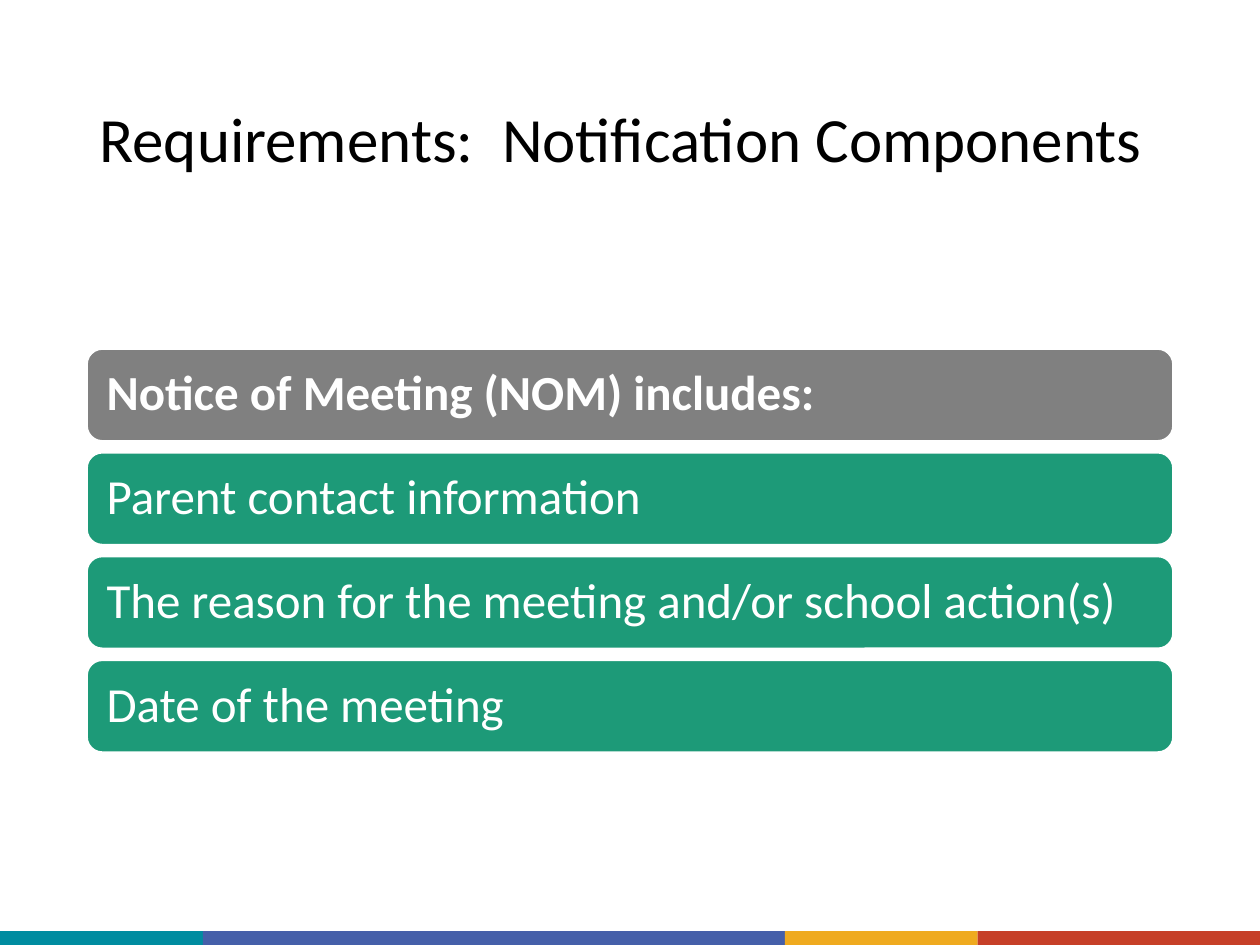
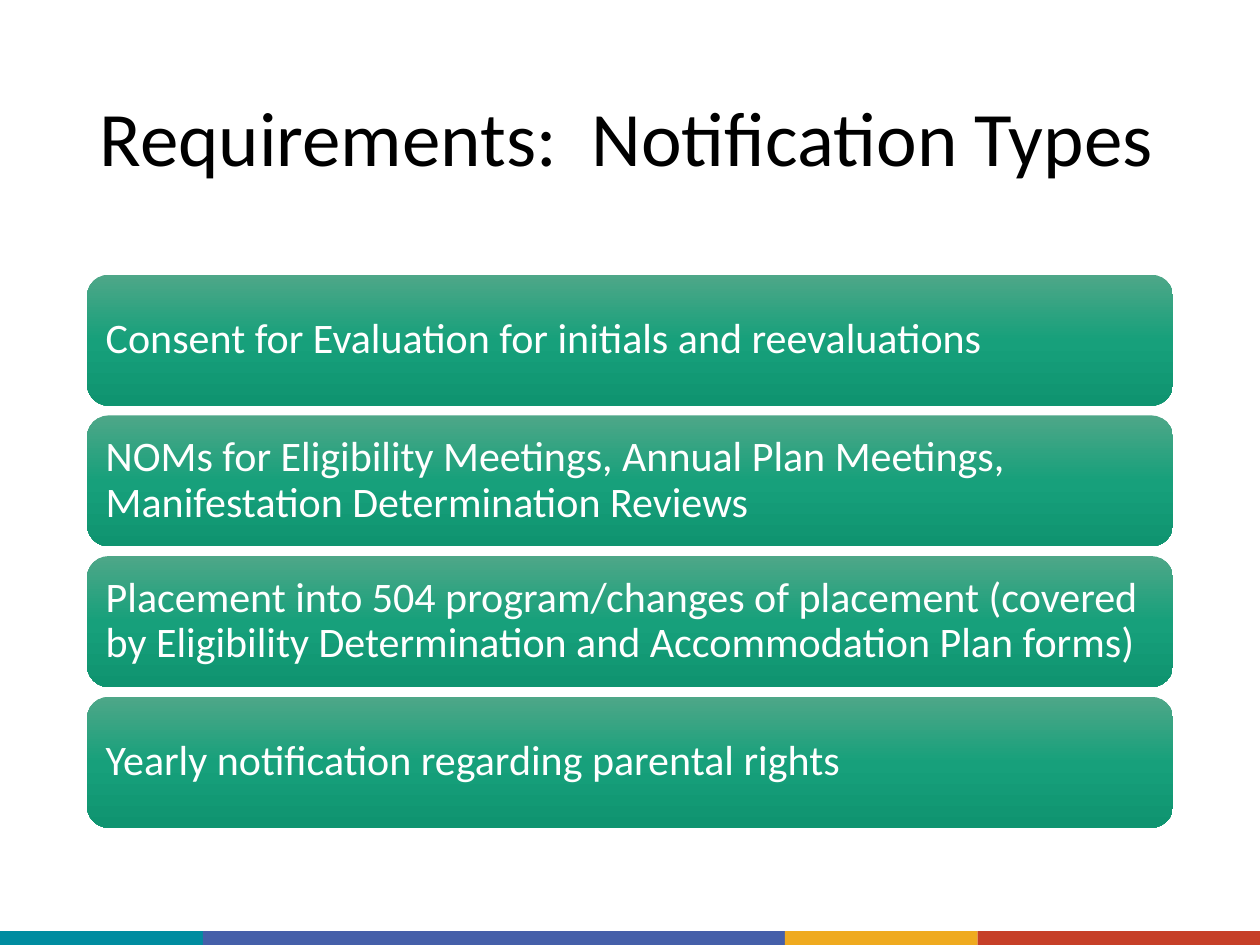
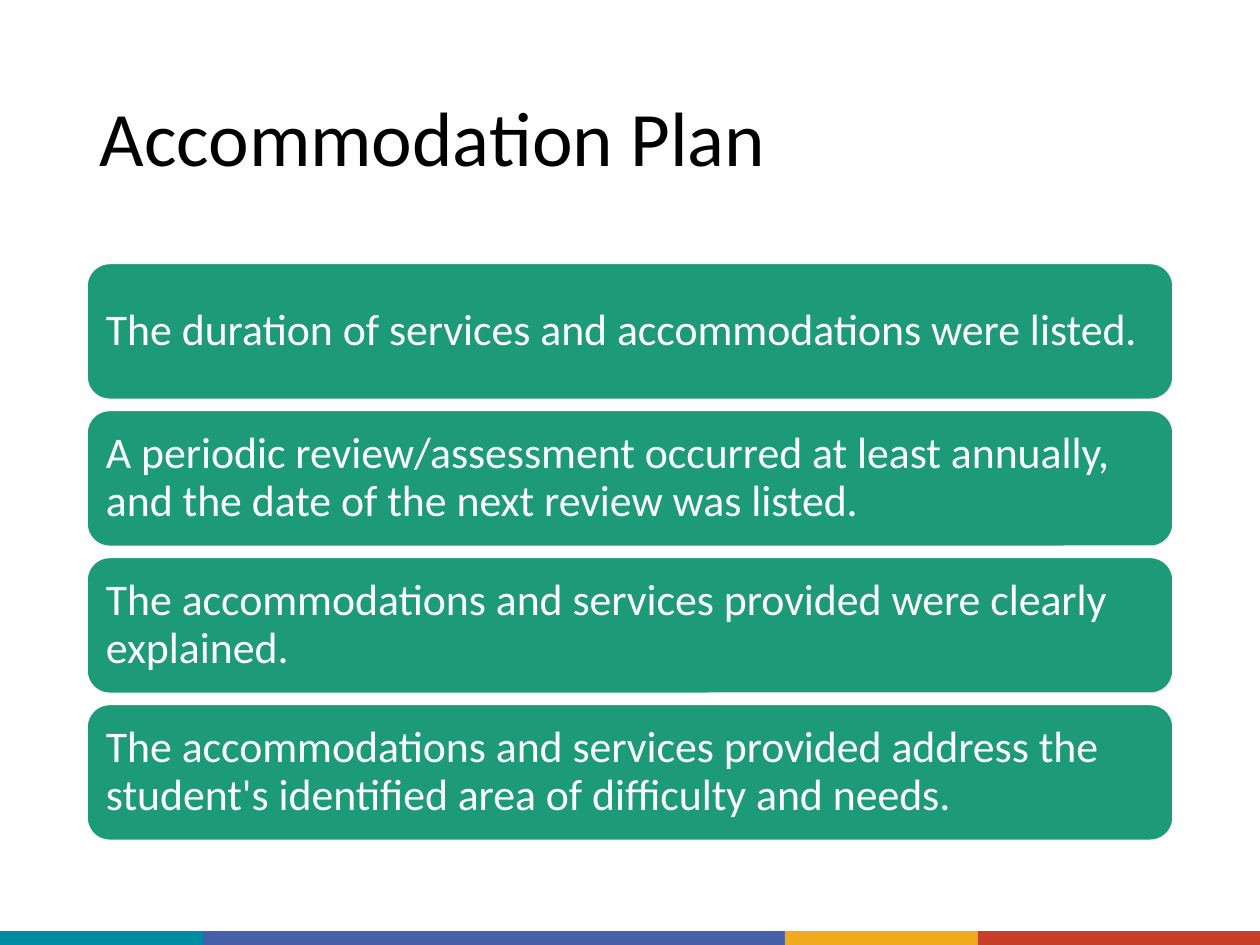
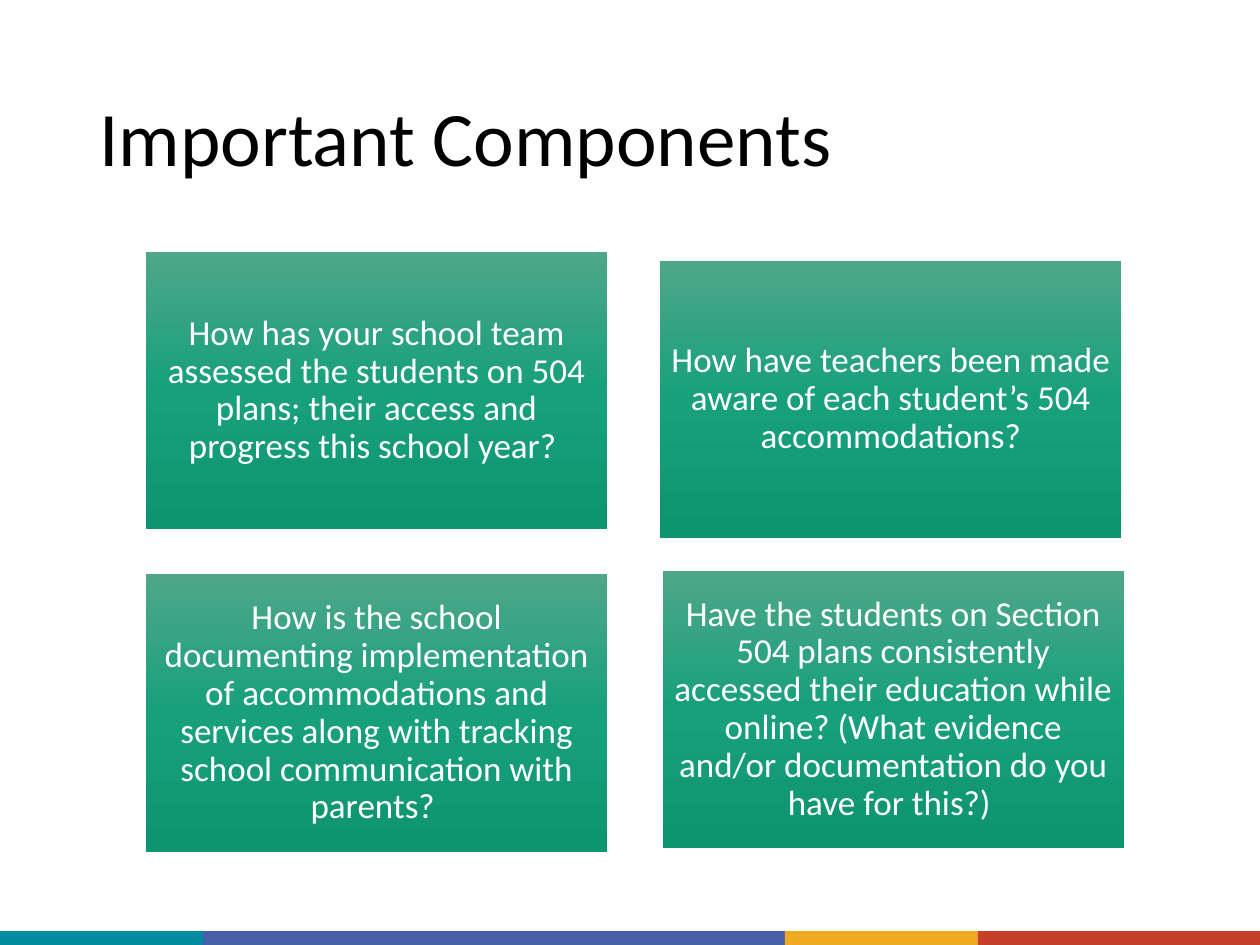
from lxml import etree
from pptx import Presentation
from pptx.dml.color import RGBColor
from pptx.enum.shapes import MSO_SHAPE
from pptx.enum.text import MSO_ANCHOR, MSO_AUTO_SIZE, PP_ALIGN
from pptx.oxml.ns import qn
from pptx.util import Inches, Pt

RECT, ROUND = MSO_SHAPE.RECTANGLE, MSO_SHAPE.ROUNDED_RECTANGLE
LEFT, CENTER = PP_ALIGN.LEFT, PP_ALIGN.CENTER
MIDDLE, NO_FIT = MSO_ANCHOR.MIDDLE, MSO_AUTO_SIZE.NONE

FONT = "Calibri"
COLORS = {
    "black": "000000", "white": "FFFFFF", "gray": "808080", "green": "1D9A78",
    "light": "4EA788", "mid": "17A07B", "dark": "0F9470",
    "teal": "008CA0", "blue": "455FA9", "gold": "EFAA1F", "red": "C63F28",
}
SHADE = [(0, "light"), (50, "mid"), (100, "dark")]
BAND = [("teal", 1.61), ("blue", 4.62), ("gold", 1.53), ("red", 2.24)]
SIDE, WIDE = 0.69, 8.62  # left edge and width of title and bars


def rgb(name):
    return RGBColor.from_string(COLORS[name])


def put_text(shape, text, size, color="white", bold=False, align=LEFT, inset=0.1):
    frame = shape.text_frame
    frame.word_wrap = True
    frame.auto_size = NO_FIT
    frame.vertical_anchor = MIDDLE
    frame.margin_left = frame.margin_right = Inches(inset)
    frame.margin_top = frame.margin_bottom = Inches(inset)
    frame.text = text
    para = frame.paragraphs[0]
    para.alignment = align
    para.line_spacing = 0.9
    font = para.runs[0].font
    font.name, font.size, font.bold = FONT, Pt(size), bold
    font.color.rgb = rgb(color)


def shade(shape):
    """Fill the shape from light at the top to dark at the bottom."""
    shape.fill.gradient()
    shape.fill.gradient_angle = 270
    stops = shape.element.spPr.find(qn("a:gradFill")).find(qn("a:gsLst"))
    stops.clear()
    for place, name in SHADE:
        stop = etree.SubElement(stops, qn("a:gs"), pos=str(place * 1000))
        etree.SubElement(stop, qn("a:srgbClr"), val=COLORS[name])


def add_box(slide, kind, left, top, width, height, fill=None, line=None):
    """Add a plain box; without a fill colour it is shaded."""
    box = slide.shapes.add_shape(
        kind, Inches(left), Inches(top), Inches(width), Inches(height))
    box.shadow.inherit = False
    if fill:
        box.fill.solid()
        box.fill.fore_color.rgb = rgb(fill)
    else:
        shade(box)
    if line:
        box.line.color.rgb = rgb(line)
        box.line.width = Pt(1)
    else:
        box.line.fill.background()
    return box


def add_band(slide, layout):
    """Draw the foot band and hand it to the layout all slides share."""
    left = 0
    for color, width in BAND:
        part = add_box(slide, RECT, left, 7.39, width, 0.11, fill=color)
        layout.shapes.element.append(part.element)
        left += width


def add_slide(deck, layout, title, size=44):
    slide = deck.slides.add_slide(layout)
    head = slide.shapes.title
    head.left, head.top = Inches(SIDE), Inches(0.4)
    head.width, head.height = Inches(WIDE), Inches(1.45)
    put_text(head, title, size, color="black")
    return slide


def add_bars(slide, texts, top, end, height, size, fill=None, line=None,
             head=False, inset=0.1):
    """Stack full-width bars evenly from top to end."""
    step = (end - top - height) / (len(texts) - 1)
    for i, text in enumerate(texts):
        first = head and i == 0
        bar = add_box(slide, ROUND, SIDE, top + i * step, WIDE, height,
                      fill="gray" if first else fill, line=line)
        put_text(bar, text, size, bold=first, inset=inset)


def add_cards(slide, cards):
    for left, top, text in cards:
        card = add_box(slide, RECT, left, top, 3.66, 2.2)
        put_text(card, text, 20, align=CENTER, inset=0.08)


def main():
    deck = Presentation()
    deck.slide_width, deck.slide_height = Inches(10), Inches(7.5)
    layout = deck.slide_layouts[5]

    # Notice contents
    slide = add_slide(deck, layout, "Requirements:  Notification Components", 36)
    add_band(slide, layout)
    add_bars(slide, [
        "Notice of Meeting (NOM) includes:",
        "Parent contact information",
        "The reason for the meeting and/or school action(s)",
        "Date of the meeting",
    ], 2.77, 5.97, 0.73, 28, fill="green", line="white", head=True, inset=0.12)

    # Notice types
    slide = add_slide(deck, layout, "Requirements:  Notification Types")
    add_bars(slide, [
        "Consent for Evaluation for initials and reevaluations",
        "NOMs for Eligibility Meetings, Annual Plan Meetings, "
        "Manifestation Determination Reviews",
        "Placement into 504 program/changes of placement (covered "
        "by Eligibility Determination and Accommodation Plan forms)",
        "Yearly notification regarding parental rights",
    ], 2.18, 6.57, 1.04, 24)

    # Plan checks
    slide = add_slide(deck, layout, "Accommodation Plan")
    add_bars(slide, [
        "The duration of services and accommodations were listed.",
        "A periodic review/assessment occurred at least annually, "
        "and the date of the next review was listed.",
        "The accommodations and services provided were clearly explained.",
        "The accommodations and services provided address the "
        "student's identified area of difficulty and needs.",
    ], 2.09, 6.67, 1.08, 25, fill="green", line="white")

    # Questions for the school team
    slide = add_slide(deck, layout, "Important Components")
    add_cards(slide, [
        (1.16, 2, "How has your school team assessed the students on 504 "
         "plans; their access and progress this school year? "),
        (5.26, 4.53, "Have the students on Section 504 plans consistently "
         "accessed their education while online? (What evidence and/or "
         "documentation do you have for this?) "),
        (1.16, 4.56, "How is the school documenting implementation of "
         "accommodations and services along with tracking school "
         "communication with parents? "),
        (5.24, 2.07, "How have teachers been made aware of each student’s "
         "504 accommodations?"),
    ])

    deck.save("out.pptx")


if __name__ == "__main__":
    main()
